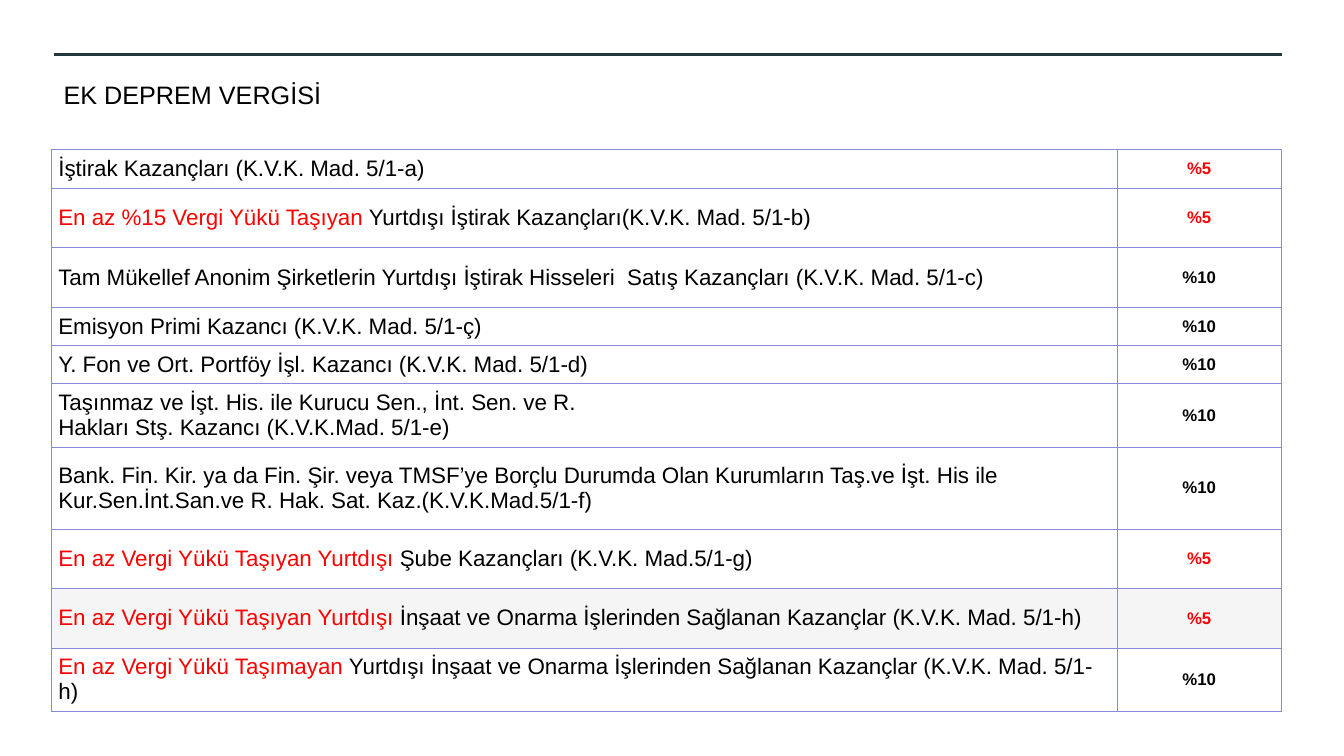
from dataclasses import dataclass

from lxml import etree
from pptx import Presentation
from pptx.dml.color import RGBColor
from pptx.enum.shapes import MSO_CONNECTOR
from pptx.enum.text import MSO_ANCHOR, PP_ALIGN
from pptx.oxml.ns import qn
from pptx.util import Cm, Pt

STRAIGHT = MSO_CONNECTOR.STRAIGHT
MIDDLE = MSO_ANCHOR.MIDDLE
LEFT, CENTER = PP_ALIGN.LEFT, PP_ALIGN.CENTER
TITLE_ONLY = 5

COLORS = {
    "rule": "21373A",
    "border": "898BD9",
    "text": "000000",
    "accent": "FF0000",
    "plain": "FFFFFF",
    "shaded": "F5F5F5",
}
FONT = "Arial"
RULE_LEFT, RULE_RIGHT = 1.35, 32.31
RULE_TOPS = (1.37, 17.68)
COLUMN_WIDTHS = (26.85, 4.14)
SHORT, TALL, TALLEST = 0.95, 1.5, 2.06
CELL_FORMAT = {
    "vertical_anchor": MIDDLE,
    "margin_left": Cm(0.17),
    "margin_right": Cm(0.17),
    "margin_top": Cm(0.17),
    "margin_bottom": Cm(0.17),
}


@dataclass(frozen=True)
class Exemption:
    label: str
    rate: str
    height: float = TALL
    condition: str = ""
    fill: str = "plain"


EXEMPTIONS = (
    Exemption("İştirak Kazançları (K.V.K. Mad. 5/1-a)", "%5", SHORT),
    Exemption(" Yurtdışı İştirak Kazançları(K.V.K. Mad. 5/1-b)", "%5",
              condition="En az %15 Vergi Yükü Taşıyan"),
    Exemption("Tam Mükellef Anonim Şirketlerin Yurtdışı İştirak Hisseleri  "
              "Satış Kazançları (K.V.K. Mad. 5/1-c)", "%10"),
    Exemption("Emisyon Primi Kazancı (K.V.K. Mad. 5/1-ç)", "%10", SHORT),
    Exemption("Y. Fon ve Ort. Portföy İşl. Kazancı (K.V.K. Mad. 5/1-d)", "%10", SHORT),
    Exemption("Taşınmaz ve İşt. His. ile Kurucu Sen., İnt. Sen. ve R.\n"
              "Hakları Stş. Kazancı (K.V.K.Mad. 5/1-e)", "%10"),
    Exemption("Bank. Fin. Kir. ya da Fin. Şir. veya TMSF’ye Borçlu Durumda Olan "
              "Kurumların Taş.ve İşt. His ile Kur.Sen.İnt.San.ve R. Hak. Sat. "
              "Kaz.(K.V.K.Mad.5/1-f)", "%10", TALLEST),
    Exemption(" Şube Kazançları (K.V.K. Mad.5/1-g)", "%5",
              condition="En az Vergi Yükü Taşıyan Yurtdışı"),
    Exemption(" İnşaat ve Onarma İşlerinden Sağlanan Kazançlar (K.V.K. Mad. 5/1-h)", "%5",
              condition="En az Vergi Yükü Taşıyan Yurtdışı", fill="shaded"),
    Exemption(" Yurtdışı İnşaat ve Onarma İşlerinden Sağlanan Kazançlar "
              "(K.V.K. Mad. 5/1-h)", "%10", condition="En az Vergi Yükü Taşımayan"),
)


def color(name: str) -> RGBColor:
    return RGBColor.from_string(COLORS[name])


def apply_format(target, values: dict) -> None:
    for name, value in values.items():
        setattr(target, name, value)


def add_text(para, text: str, size: int, color_name: str = "text", bold: bool = False) -> None:
    for number, line in enumerate(text.split("\n")):
        if number:
            para.add_line_break()
        span = para.add_run()
        span.text = line
        apply_format(span.font, {"name": FONT, "size": Pt(size), "bold": bold})
        span.font.color.rgb = color(color_name)


def add_rule(page, top: float) -> None:
    rule = page.shapes.add_connector(
        STRAIGHT, Cm(RULE_LEFT), Cm(top), Cm(RULE_RIGHT), Cm(top))
    rule.line.color.rgb = color("rule")
    rule.line.width = Pt(2.25)
    etree.SubElement(rule._element.spPr, qn("a:effectLst"))


def add_title(page, text: str) -> None:
    title = page.shapes.title
    apply_format(title, {"left": Cm(1.35), "top": Cm(1.65),
                         "width": Cm(29.54), "height": Cm(1.45)})
    title.text_frame.vertical_anchor = MIDDLE
    para = title.text_frame.paragraphs[0]
    para.alignment = LEFT
    add_text(para, text, 18)


def format_cell(cell, fill: str) -> None:
    apply_format(cell, CELL_FORMAT)
    cell.fill.solid()
    cell.fill.fore_color.rgb = color(fill)
    properties = cell._tc.get_or_add_tcPr()
    for position, side in enumerate(("lnL", "lnR", "lnT", "lnB")):
        border = etree.Element(qn(f"a:{side}"), w=str(int(Pt(0.75))))
        paint = etree.SubElement(border, qn("a:solidFill"))
        etree.SubElement(paint, qn("a:srgbClr"), val=COLORS["border"])
        properties.insert(position, border)


def add_exemption_table(page, exemptions: tuple[Exemption, ...]) -> None:
    frame = page.shapes.add_table(
        len(exemptions), len(COLUMN_WIDTHS), Cm(1.3), Cm(3.77),
        Cm(sum(COLUMN_WIDTHS)), Cm(sum(item.height for item in exemptions)))
    table = frame.table
    apply_format(table, {"first_row": False, "horz_banding": False})
    for column, width in zip(table.columns, COLUMN_WIDTHS):
        column.width = Cm(width)
    for row, item in zip(table.rows, exemptions):
        row.height = Cm(item.height)
        label_cell, rate_cell = row.cells
        for cell in row.cells:
            format_cell(cell, item.fill)
        label_para = label_cell.text_frame.paragraphs[0]
        if item.condition:
            add_text(label_para, item.condition, 16, "accent")
        add_text(label_para, item.label, 16)
        rate_para = rate_cell.text_frame.paragraphs[0]
        rate_para.alignment = CENTER
        add_text(rate_para, item.rate, 12, "accent" if item.rate == "%5" else "text", True)


def main() -> None:
    deck = Presentation()
    apply_format(deck, {"slide_width": Cm(33.87), "slide_height": Cm(19.05)})
    page = deck.slides.add_slide(deck.slide_layouts[TITLE_ONLY])
    for top in RULE_TOPS:
        add_rule(page, top)
    add_title(page, "EK DEPREM VERGİSİ")
    add_exemption_table(page, EXEMPTIONS)
    deck.save("out.pptx")


if __name__ == "__main__":
    main()
